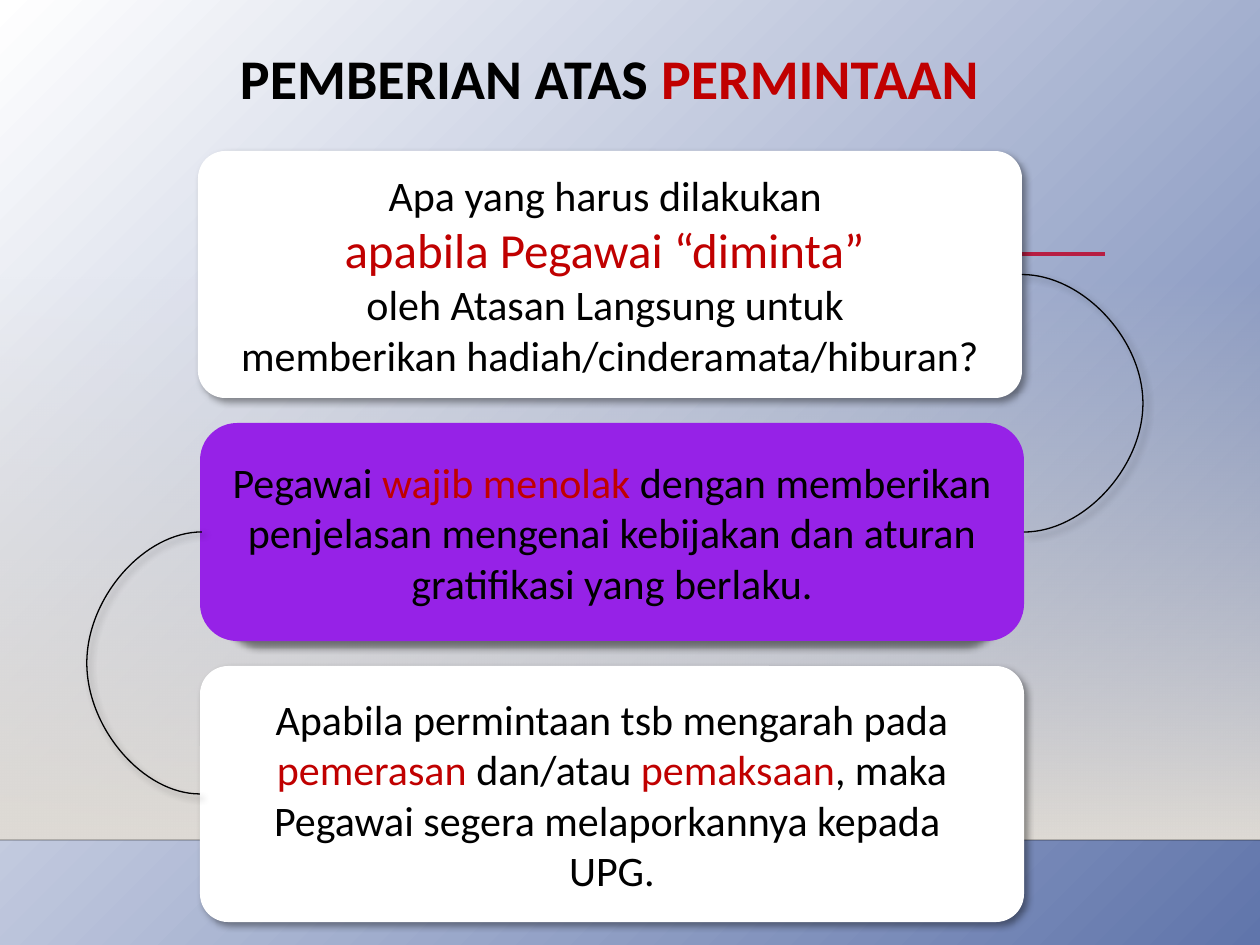
from lxml import etree
from pptx import Presentation
from pptx.dml.color import RGBColor
from pptx.enum.shapes import MSO_CONNECTOR, MSO_SHAPE
from pptx.enum.text import MSO_ANCHOR, MSO_AUTO_SIZE, PP_ALIGN
from pptx.oxml import parse_xml
from pptx.oxml.ns import nsdecls, qn
from pptx.util import Pt

RECTANGLE, ROUNDED = MSO_SHAPE.RECTANGLE, MSO_SHAPE.ROUNDED_RECTANGLE
STRAIGHT, CURVE = MSO_CONNECTOR.STRAIGHT, MSO_CONNECTOR.CURVE
CENTER = PP_ALIGN.CENTER
TOP, MIDDLE = MSO_ANCHOR.TOP, MSO_ANCHOR.MIDDLE
GROW = MSO_AUTO_SIZE.SHAPE_TO_FIT_TEXT

BLACK = RGBColor(0x00, 0x00, 0x00)
WHITE = RGBColor(0xFF, 0xFF, 0xFF)
RED = RGBColor(0xC0, 0x00, 0x00)
CRIMSON = RGBColor(0xB7, 0x1E, 0x42)
PURPLE = RGBColor(0x96, 0x22, 0xE7)
SAND = RGBColor(0xDF, 0xDB, 0xD5)
BLUE = RGBColor(0x60, 0x75, 0xAB)
NAVY = RGBColor(0x35, 0x42, 0x64)

FONT = "Calibri"
WIDTH, HEIGHT = 1260, 945
LEFT_SITE, RIGHT_SITE = 1, 3

TITLE = [[("PEMBERIAN ATAS ", 32, BLACK), ("PERMINTAAN", 32, RED)]]
QUESTION = [
    [("Apa yang harus dilakukan ", 24, BLACK)],
    [("apabila Pegawai “diminta” ", 28, RED)],
    [("oleh Atasan Langsung untuk ", 24, BLACK)],
    [("memberikan hadiah/cinderamata/hiburan?", 24, BLACK)],
]
REFUSAL = [[
    ("Pegawai ", 24, BLACK),
    ("wajib menolak ", 24, RED),
    ("dengan memberikan penjelasan mengenai kebijakan dan aturan "
     "gratifikasi yang berlaku.", 24, BLACK),
]]
REPORT = [
    [
        ("Apabila permintaan tsb mengarah pada ", 24, BLACK),
        ("pemerasan", 24, RED),
        (" dan/atau ", 24, BLACK),
        ("pemaksaan", 24, RED),
        (", maka Pegawai segera melaporkannya kepada ", 24, BLACK),
    ],
    [("UPG.", 24, BLACK)],
]


def px(length):
    return round(length * 914400 / 126)


def gradient(stops, direction):
    marks = "".join(
        f'<a:gs pos="{pos * 1000}"><a:srgbClr val="{color}">'
        f'<a:alpha val="{alpha * 1000}"/></a:srgbClr></a:gs>'
        for pos, color, alpha in stops)
    return parse_xml(f'<a:gradFill {nsdecls("a")} rotWithShape="1">'
                     f'<a:gsLst>{marks}</a:gsLst>{direction}</a:gradFill>')


def set_shadow(shape, alpha=40, blur=4, distance=3, angle=45, spread=100):
    properties = shape._element.spPr
    for effects in properties.findall(qn("a:effectLst")):
        properties.remove(effects)
    properties.append(parse_xml(
        f'<a:effectLst {nsdecls("a")}><a:outerShdw blurRad="{Pt(blur)}" '
        f'dist="{Pt(distance)}" dir="{angle * 60000}" sx="{spread * 1000}" '
        f'algn="ctr" rotWithShape="0"><a:srgbClr val="{BLACK}">'
        f'<a:alpha val="{alpha * 1000}"/></a:srgbClr></a:outerShdw></a:effectLst>'))


def write(frame, paragraphs, anchor, bold=False):
    frame.word_wrap = True
    frame.vertical_anchor = anchor
    for index, pieces in enumerate(paragraphs):
        paragraph = frame.add_paragraph() if index else frame.paragraphs[0]
        paragraph.alignment = CENTER
        for wording, size, color in pieces:
            run = paragraph.add_run()
            run.text = wording
            run.font.name = FONT
            run.font.size = Pt(size)
            run.font.bold = bold
            run.font.color.rgb = color


def add_rule(slide, left, y, width, color, weight, alpha=100):
    rule = slide.shapes.add_connector(STRAIGHT, px(left), px(y), px(left + width), px(y))
    rule.line.color.rgb = color
    rule.line.width = Pt(weight)
    tint = rule.line._ln.find(".//" + qn("a:srgbClr"))
    etree.SubElement(tint, qn("a:alpha"), val=str(alpha * 1000))
    etree.SubElement(rule._element.spPr, qn("a:effectLst"))


def add_backdrop(slide, left, top, width, height):
    slide.background.fill.solid()
    plain = slide.background._cSld.find(".//" + qn("a:solidFill"))
    plain.getparent().replace(plain, gradient(
        [(0, WHITE, 100), (100, BLUE, 100), (100, NAVY, 100)],
        '<a:path path="circle"><a:fillToRect r="100000" b="100000"/></a:path>'))

    haze_top, horizon = top + 277, top + 840
    haze = slide.shapes.add_shape(RECTANGLE, px(left), px(haze_top),
                                  px(width), px(horizon - haze_top))
    haze.shadow.inherit = False
    haze.line.fill.background()
    haze.fill.solid()
    flat = haze._element.spPr.find(qn("a:solidFill"))
    haze._element.spPr.replace(flat, gradient(
        [(0, SAND, 0), (100, SAND, 100)], '<a:lin ang="5400000" scaled="0"/>'))
    add_rule(slide, left, horizon, width, BLACK, 1, alpha=20)
    add_rule(slide, left + 199, top + 254, 906, CRIMSON, 2.5)


def add_title(slide, left, top, width, height):
    title = slide.shapes.title
    title.left, title.top, title.width, title.height = map(px, (left, top, width, height))
    write(title.text_frame, TITLE, TOP, bold=True)
    title.text_frame.auto_size = GROW


def add_step(slide, left, top, width, height, fill, paragraphs, corner):
    step = slide.shapes.add_shape(ROUNDED, px(left), px(top), px(width), px(height))
    step.adjustments[0] = corner
    step.fill.solid()
    step.fill.fore_color.rgb = fill
    step.line.fill.background()
    set_shadow(step)
    write(step.text_frame, paragraphs, MIDDLE)
    return step


def add_loop(slide, start, end, site, reach):
    loop = slide.shapes.add_connector(CURVE, 0, 0, 0, 0)
    loop.begin_connect(start, site)
    loop.end_connect(end, site)
    side = 1 if site == RIGHT_SITE else -1
    if loop.begin_x == loop.end_x:
        loop.begin_x -= side * px(2)
    loop.line.color.rgb = BLACK
    loop.line.width = Pt(0.75)
    bend = round(px(reach) / loop.width * 100000)
    guides = loop._element.spPr.find(qn("a:prstGeom")).get_or_add_avLst()
    etree.SubElement(guides, qn("a:gd"), name="adj1", fmla=f"val {bend}")
    set_shadow(loop)


def add_steps(slide, left, top, width):
    question = add_step(slide, left, top, width, 247, WHITE, QUESTION, 0.11)
    refusal = add_step(slide, left + 2, top + 272, width, 218, PURPLE, REFUSAL, 0.17)
    report = add_step(slide, left + 2, top + 515, width, 256, WHITE, REPORT, 0.11)
    set_shadow(refusal, alpha=48, distance=4, angle=90, spread=94)
    add_loop(slide, question, refusal, RIGHT_SITE, 122)
    add_loop(slide, refusal, report, LEFT_SITE, 116)


def main():
    deck = Presentation()
    deck.slide_width, deck.slide_height = px(WIDTH), px(HEIGHT)
    slide = deck.slides.add_slide(deck.slide_layouts[5])
    add_backdrop(slide, 0, 0, WIDTH, HEIGHT)
    add_title(slide, 94, 37, 1031, 80)
    add_steps(slide, 198, 151, 824)
    deck.save("out.pptx")


if __name__ == "__main__":
    main()
